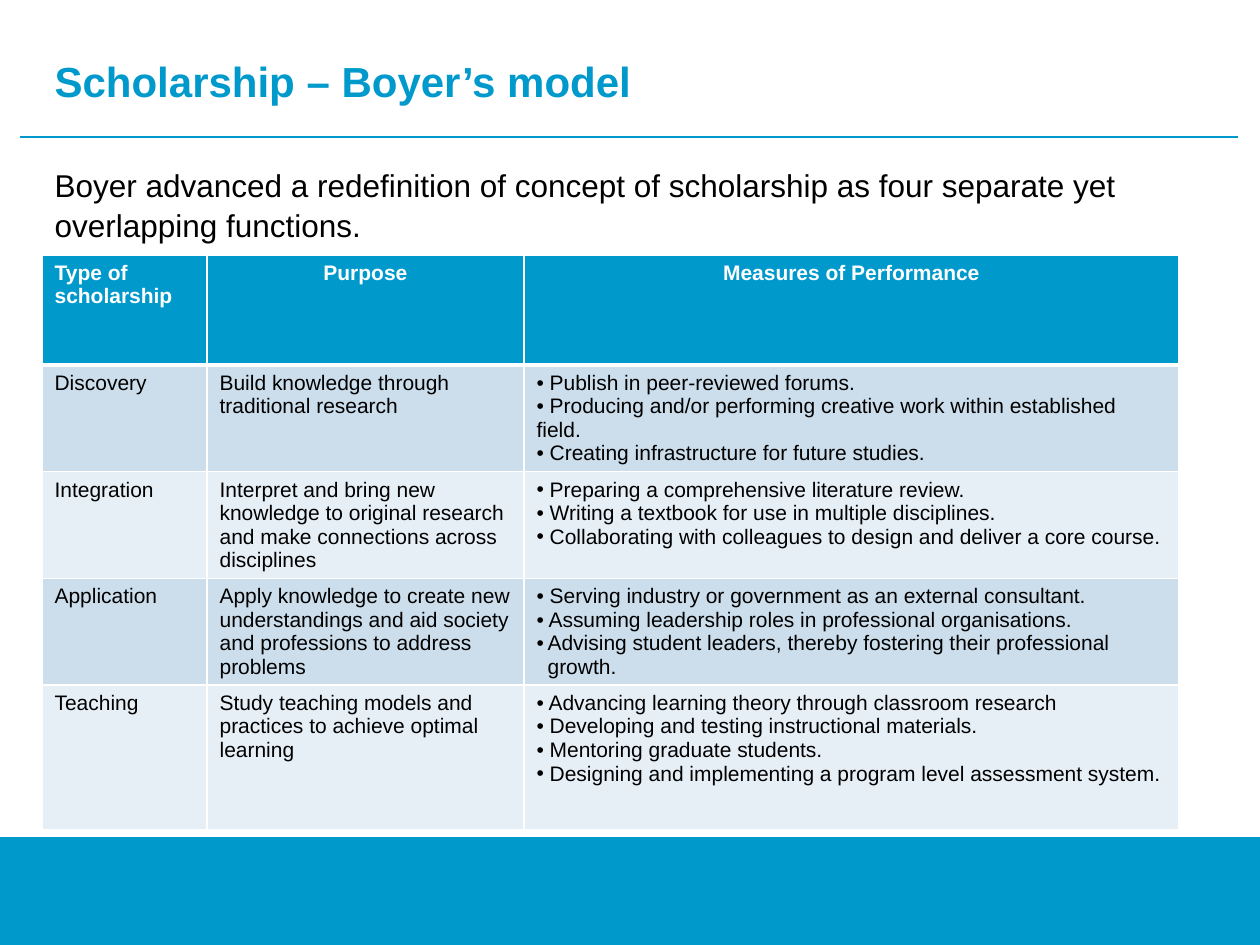
from lxml.etree import SubElement
from pptx import Presentation
from pptx.dml.color import RGBColor
from pptx.enum.shapes import MSO_CONNECTOR, MSO_SHAPE
from pptx.enum.text import MSO_ANCHOR, MSO_AUTO_SIZE, PP_ALIGN
from pptx.oxml.ns import qn
from pptx.util import Pt

EMU_PER_PX = 914400 / 126
FONT = "Arial"
BLUE, WHITE, BLACK = "0099CC", "FFFFFF", "000000"
BANDS = ["CCDEEC", "E7EFF6"]

COL_WIDTHS = [165, 317, 655]
ROW_HEIGHTS = [110, 106, 106, 106, 145]
HEADERS = ["Type of scholarship", "Purpose", "Measures of Performance"]
ROWS = [
    ("Discovery", "Build knowledge through traditional research",
     [" Publish in peer-reviewed forums.",
      " Producing and/or performing creative work within established field.",
      " Creating infrastructure for future studies."]),
    ("Integration",
     "Interpret and bring new knowledge to original research and make "
     "connections across disciplines",
     [" Preparing a comprehensive literature review.",
      " Writing a textbook for use in multiple disciplines.",
      " Collaborating with colleagues to design and deliver a core course."]),
    ("Application",
     "Apply knowledge to create new understandings and aid society and "
     "professions to address problems",
     [" Serving industry or government as an external consultant.",
      " Assuming leadership roles in professional organisations.",
      "Advising student leaders, thereby fostering their professional growth."]),
    ("Teaching",
     "Study teaching models and practices to achieve optimal learning",
     [" Advancing learning theory through classroom research",
      " Developing and testing instructional materials.",
      " Mentoring graduate students.",
      " Designing and implementing a program level assessment system."]),
]


def px(n):
    return round(n * EMU_PER_PX)


def rgb(value):
    return RGBColor.from_string(value)


def style(p, size, color, bold=False, align=PP_ALIGN.LEFT):
    p.alignment = align
    for r in p.runs:
        r.font.name = FONT
        r.font.size = Pt(size)
        r.font.bold = bold
        r.font.color.rgb = rgb(color)


def add_bullet(p):
    """A text with its own leading space needs no indent; others hang."""
    hang = 0 if p.text.startswith(" ") else px(11)
    pPr = p._p.get_or_add_pPr()
    pPr.set("marL", str(hang))
    pPr.set("indent", str(-hang))
    SubElement(pPr, qn("a:buFont"), typeface=FONT)
    SubElement(pPr, qn("a:buChar"), char="•")


def set_borders(cell, top, bottom):
    tcPr = cell._tc.get_or_add_tcPr()
    for side, width in zip("LRTB", (1, 1, top, bottom)):
        ln = SubElement(tcPr, qn(f"a:ln{side}"), w=str(Pt(width)))
        fill = SubElement(ln, qn("a:solidFill"))
        SubElement(fill, qn("a:srgbClr"), val=WHITE)


def fill_placeholder(sp, box, text, size, color, bold=False, spacing=1.0):
    sp.left, sp.top, sp.width, sp.height = map(px, box)
    tf = sp.text_frame
    tf.text = text
    tf.word_wrap = True
    tf.auto_size = MSO_AUTO_SIZE.NONE
    tf.vertical_anchor = MSO_ANCHOR.TOP
    p = tf.paragraphs[0]
    p.space_before = Pt(0)
    p.line_spacing = spacing
    style(p, size, color, bold)


def add_footer_band(slide, box):
    sp = slide.shapes.add_shape(MSO_SHAPE.RECTANGLE, *map(px, box))
    sp.shadow.inherit = False
    sp.fill.solid()
    sp.fill.fore_color.rgb = rgb(BLUE)
    sp.line.fill.background()


def add_rule(slide, left, right, y):
    line = slide.shapes.add_connector(
        MSO_CONNECTOR.STRAIGHT, px(left), px(y), px(right), px(y))
    line.line.color.rgb = rgb(BLUE)
    line.line.width = Pt(1.5)
    SubElement(line._element.spPr, qn("a:effectLst"))


def fill_cell(cell, lines, fill, color, bulleted=False, **fmt):
    cell.fill.solid()
    cell.fill.fore_color.rgb = rgb(fill)
    tf = cell.text_frame
    tf.text = "\n".join(lines)
    for p in tf.paragraphs:
        if bulleted:
            add_bullet(p)
        style(p, 12, color, **fmt)


def add_scholarship_table(slide, left, top):
    table = slide.shapes.add_table(
        len(ROW_HEIGHTS), len(COL_WIDTHS), px(left), px(top),
        px(sum(COL_WIDTHS)), px(sum(ROW_HEIGHTS))).table
    table.horz_banding = False
    for column, width in zip(table.columns, COL_WIDTHS):
        column.width = px(width)
    for i, height in enumerate(ROW_HEIGHTS):
        table.rows[i].height = px(height)
        for cell in table.rows[i].cells:
            set_borders(cell, 3 if i == 1 else 1, 3 if i == 0 else 1)

    for j, header in enumerate(HEADERS):
        align = PP_ALIGN.CENTER if j else PP_ALIGN.LEFT
        fill_cell(table.cell(0, j), [header], BLUE, WHITE, bold=True, align=align)
    for i, (kind, purpose, measures) in enumerate(ROWS):
        band = BANDS[i % 2]
        fill_cell(table.cell(i + 1, 0), [kind], band, BLACK)
        fill_cell(table.cell(i + 1, 1), [purpose], band, BLACK)
        fill_cell(table.cell(i + 1, 2), measures, band, BLACK, bulleted=True)


def main():
    prs = Presentation()
    prs.slide_width, prs.slide_height = px(1260), px(945)
    slide = prs.slides.add_slide(prs.slide_layouts[0])
    add_footer_band(slide, (0, 837, 1260, 108))
    add_rule(slide, 20, 1238, 137)
    fill_placeholder(slide.shapes.title, (42, 49, 1218, 86),
                     "Scholarship – Boyer’s model", 24, BLUE, bold=True)
    fill_placeholder(slide.placeholders[1], (42, 158, 1169, 158),
                     "Boyer advanced a redefinition of concept of scholarship "
                     "as four separate yet overlapping functions.",
                     18, BLACK, spacing=1.05)
    add_scholarship_table(slide, 42, 255)
    prs.save("out.pptx")


if __name__ == "__main__":
    main()
